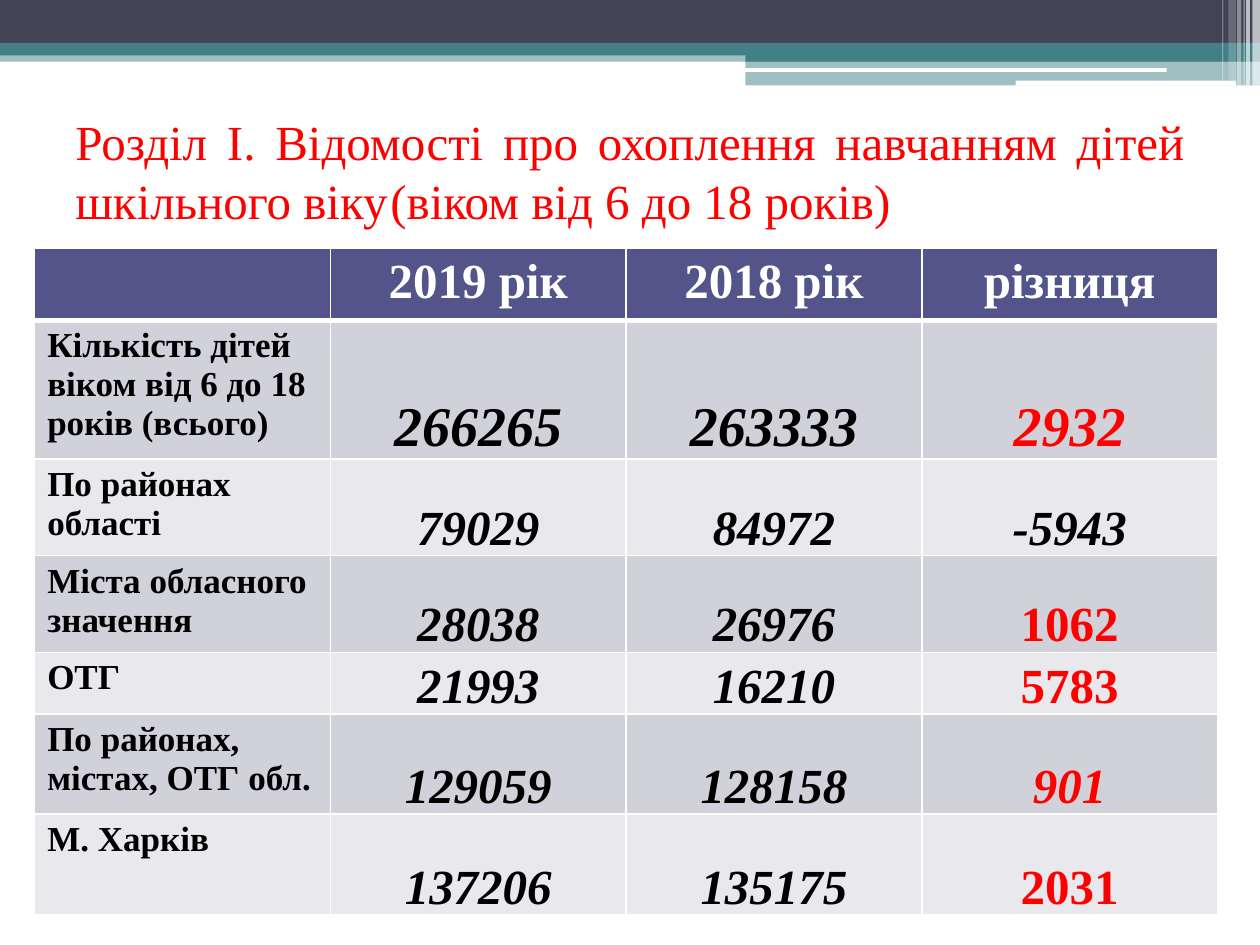
from lxml.etree import SubElement
from pptx import Presentation
from pptx.dml.color import RGBColor
from pptx.enum.shapes import MSO_SHAPE as SHAPE
from pptx.enum.text import MSO_ANCHOR as ANCHOR, PP_ALIGN as ALIGN
from pptx.oxml.ns import qn
from pptx.util import Pt

FONT = "Times New Roman"
WHITE = RGBColor(0xFF, 0xFF, 0xFF)
BLACK = RGBColor(0, 0, 0)
RED = RGBColor(0xFF, 0, 0)
NAVY = RGBColor(0x42, 0x44, 0x56)
TEAL = RGBColor(0x43, 0x80, 0x86)
HEADER_FILL = RGBColor(0x53, 0x54, 0x8A)
BAND_FILLS = RGBColor(0xD1, 0xD1, 0xDA), RGBColor(0xE9, 0xE9, 0xED)

TITLE = ("Розділ І. Відомості про охоплення навчанням дітей шкільного віку\t"
         "(віком від 6 до 18 років)")
HEADERS = ["", "2019 рік", "2018 рік", "різниця"]
# label, 2019, 2018, difference, row height, number size, difference colour, difference italic
ROWS = [
    ("Кількість дітей віком від 6 до 18 років (всього)",
     "266265", "263333", "2932", 79.2, 32, RED, True),
    ("По районах області", "79029", "84972", "-5943", 55.2, 28, BLACK, True),
    ("Міста обласного значення", "28038", "26976", "1062", 55.2, 28, RED, False),
    ("ОТГ", "21993", "16210", "5783", 35.2, 28, RED, False),
    ("По районах, містах, ОТГ обл.", "129059", "128158", "901", 57.4, 28, RED, True),
    ("М. Харків", "137206", "135175", "2031", 57.4, 28, RED, False),
]
HEADER_HEIGHT, COLUMN_WIDTH = 41, 169

# left, top, width, height, colour, opacity in percent
BANDS = [
    (0, 28.8, 720, 6.5, TEAL, 50),
    (0, 0, 720, 24.5, NAVY, 100),
    (0, 24.5, 720, 7.2, TEAL, 100),
    (426, 28.1, 294, 7.2, TEAL, 100),
    (426, 34.9, 294, 14, TEAL, 50),
]
ROUNDED_BARS = [
    (425.5, 38.9, 241.2, 2.2, WHITE, 100),
    (580.3, 46.1, 126, 2.9, WHITE, 100),
]
STRIPES = [  # left, width, height, opacity
    (715.7, 4.3, 49, 65), (712.1, 2.2, 49, 65), (710.6, 0.7, 49, 60),
    (707, 2.2, 49, 40), (702, 4.3, 46, 20), (698.4, 0.7, 46, 30),
]


def add_bar(shapes, kind, left, top, width, height, color, opacity):
    sp = shapes.add_shape(kind, Pt(left), Pt(top), Pt(width), Pt(height))
    sp.shadow.inherit = False
    sp.line.fill.background()
    sp.fill.solid()
    sp.fill.fore_color.rgb = color
    if opacity < 100:
        srgb = sp.fill._xPr.find(qn("a:solidFill")).find(qn("a:srgbClr"))
        SubElement(srgb, qn("a:alpha"), val=str(opacity * 1000))


def write(tf, text, size, color, align, bold=False, italic=False):
    p = tf.paragraphs[0]
    p.text = text
    p.alignment = align
    for r in p.runs:
        r.font.name, r.font.size, r.font.color.rgb = FONT, Pt(size), color
        r.font.bold, r.font.italic = bold, italic


def set_cell(cell, fill, bottom_width=1, top_width=1):
    tc_pr = cell._tc.get_or_add_tcPr()
    for side, width in (("L", 1), ("R", 1), ("T", top_width), ("B", bottom_width)):
        ln = SubElement(tc_pr, qn(f"a:ln{side}"), w=str(Pt(width)))
        SubElement(SubElement(ln, qn("a:solidFill")), qn("a:srgbClr"), val=str(WHITE))
    cell.fill.solid()
    cell.fill.fore_color.rgb = fill


def add_number(cell, text, size, color, italic):
    cell.margin_left = cell.margin_right = cell.margin_top = Pt(0.75)
    cell.margin_bottom = 0
    cell.vertical_anchor = ANCHOR.BOTTOM
    write(cell.text_frame, text, size, color, ALIGN.CENTER, True, italic)


prs = Presentation()
prs.slide_width, prs.slide_height = Pt(720), Pt(540)
shapes = prs.slides.add_slide(prs.slide_layouts[6]).shapes

for band in BANDS:
    add_bar(shapes, SHAPE.RECTANGLE, *band)
for bar in ROUNDED_BARS:
    add_bar(shapes, SHAPE.ROUNDED_RECTANGLE, *bar)
for left, width, height, opacity in STRIPES:
    add_bar(shapes, SHAPE.RECTANGLE, left, 0, width, height, WHITE, opacity)

title = shapes.add_textbox(Pt(36), Pt(55), Pt(648), Pt(85)).text_frame
title.word_wrap = True
title.vertical_anchor = ANCHOR.MIDDLE
write(title, TITLE, 28, RED, ALIGN.JUSTIFY)

heights = [HEADER_HEIGHT] + [row[4] for row in ROWS]
table = shapes.add_table(len(heights), len(HEADERS), Pt(19.8), Pt(142),
                         Pt(COLUMN_WIDTH * len(HEADERS)), Pt(sum(heights))).table
for column in table.columns:
    column.width = Pt(COLUMN_WIDTH)
for table_row, height in zip(table.rows, heights):
    table_row.height = Pt(height)

for c, text in enumerate(HEADERS):
    cell = table.cell(0, c)
    set_cell(cell, HEADER_FILL, bottom_width=3)
    write(cell.text_frame, text, 28, WHITE, ALIGN.CENTER, True)

for i, (label, now, before, change, _, size, color, italic) in enumerate(ROWS):
    cells = table.rows[i + 1].cells
    for cell in cells:
        set_cell(cell, BAND_FILLS[i % 2], top_width=1 if i else 3)
    write(cells[0].text_frame, label, 20, BLACK, ALIGN.LEFT, True)
    add_number(cells[1], now, size, BLACK, True)
    add_number(cells[2], before, size, BLACK, True)
    add_number(cells[3], change, size, color, italic)

prs.save("out.pptx")
